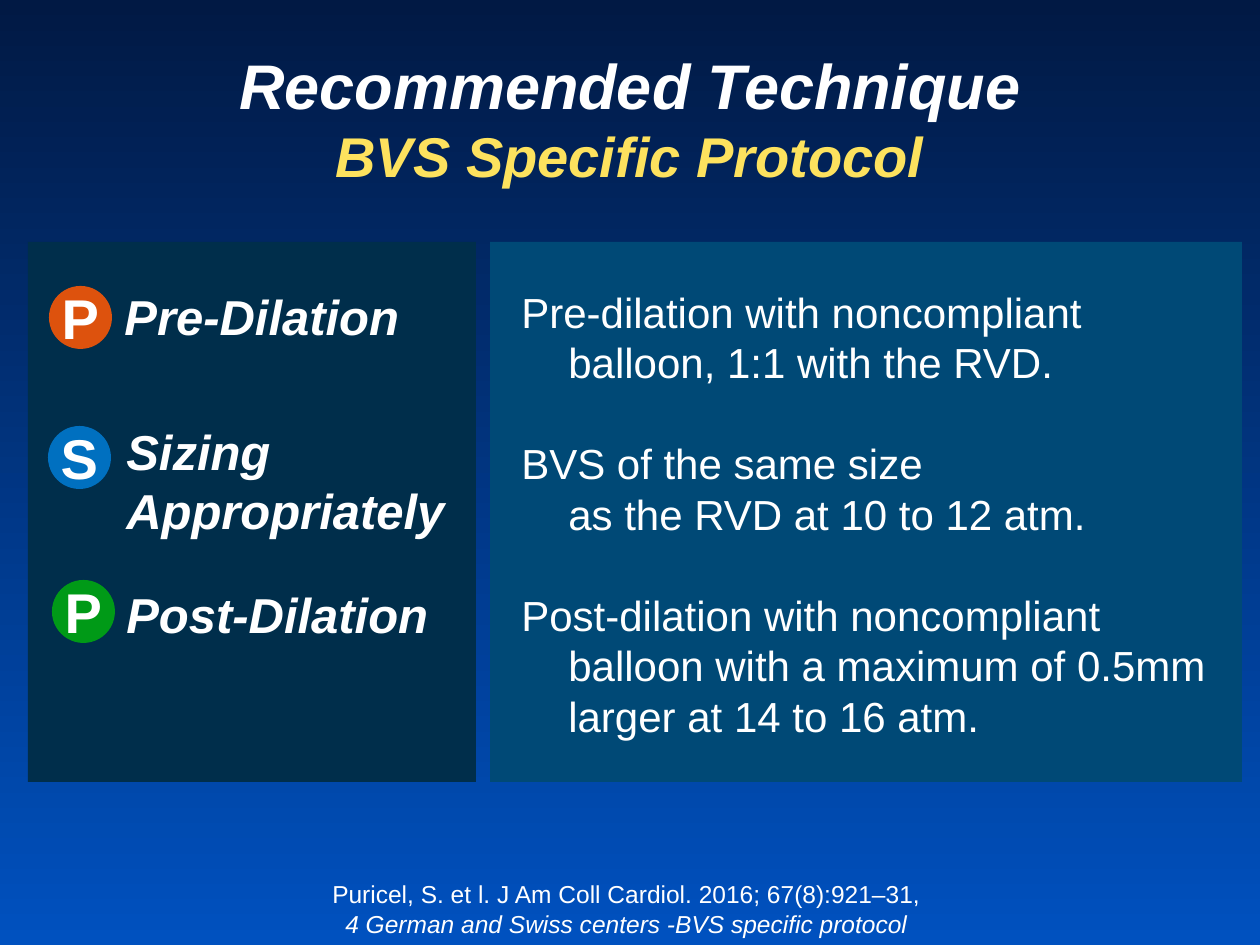
"""Build the recommended technique slide with its pre-dilation, sizing and post-dilation steps."""
from pptx import Presentation
from pptx.dml.color import RGBColor
from pptx.enum.shapes import MSO_SHAPE as Shape
from pptx.enum.text import MSO_ANCHOR as Anchor, MSO_AUTO_SIZE as AutoSize, PP_ALIGN as Align
from pptx.util import Pt

EMU_PER_INCH, PX_PER_INCH = 914400, 126
COLORS = {
    "top": "011944", "bottom": "0051BF", "details": "004976", "steps": "002E4B",
    "orange": "DD520D", "blue": "0070C0", "green": "009A17",
    "white": "FFFFFF", "yellow": "FDE25E",
}


def px(length):
    return round(length * EMU_PER_INCH / PX_PER_INCH)


def color(name):
    return RGBColor.from_string(COLORS[name])


def write(paragraph, text, size, fill="white", bold=False, italic=False,
          align=Align.LEFT, before=0, hanging=0):
    paragraph.alignment = align
    paragraph.space_before = Pt(before)
    if hanging:
        properties = paragraph._p.get_or_add_pPr()
        properties.set("marL", str(px(hanging)))
        properties.set("indent", str(-px(hanging)))
    run = paragraph.add_run()
    run.text = text
    font = run.font
    font.name, font.size, font.bold, font.italic = "Arial", Pt(size), bold, italic
    font.color.rgb = color(fill)


class SlideBuilder:
    def __init__(self, presentation):
        self.slide = presentation.slides.add_slide(presentation.slide_layouts[5])

    def background(self, top, bottom):
        fill = self.slide.background.fill
        fill.gradient()
        fill.gradient_angle = 270
        for stop, name, position in zip(fill.gradient_stops, (top, bottom), (0, 1)):
            stop.color.rgb = color(name)
            stop.position = position

    def fill_text(self, frame, lines, **style):
        frame.word_wrap = True
        frame.auto_size = AutoSize.NONE
        frame.vertical_anchor = Anchor.TOP
        for index, (text, changes) in enumerate(lines):
            paragraph = frame.add_paragraph() if index else frame.paragraphs[0]
            write(paragraph, text, **{**style, **changes})

    def title(self, box, lines, **style):
        title = self.slide.shapes.title
        title.left, title.top, title.width, title.height = map(px, box)
        self.fill_text(title.text_frame, lines, **style)

    def text(self, box, lines, **style):
        frame = self.slide.shapes.add_textbox(*map(px, box)).text_frame
        self.fill_text(frame, lines, **style)

    def shape(self, kind, box, fill):
        shape = self.slide.shapes.add_shape(kind, *map(px, box))
        shape.shadow.inherit = False
        shape.fill.solid()
        shape.fill.fore_color.rgb = color(fill)
        shape.line.fill.background()
        return shape

    def badge(self, left, top, letter, fill):
        frame = self.shape(Shape.OVAL, (left, top, 63, 63), fill).text_frame
        frame.word_wrap = False
        frame.vertical_anchor = Anchor.MIDDLE
        write(frame.paragraphs[0], letter, 32, bold=True, align=Align.CENTER)


def main():
    presentation = Presentation()
    presentation.slide_width, presentation.slide_height = px(1260), px(945)
    builder = SlideBuilder(presentation)
    builder.background("top", "bottom")
    builder.title((0, 40, 1260, 158), [
        ("Recommended Technique", {}),
        ("BVS Specific Protocol", {"size": 32, "fill": "yellow"}),
    ], size=36, bold=True, italic=True, align=Align.CENTER)

    builder.shape(Shape.RECTANGLE, (490, 242, 752, 540), "details")
    builder.text((509, 280, 732, 471), [
        ("Pre-dilation with noncompliant balloon, 1:1 with the RVD.", {}),
        ("BVS of the same size", {"before": 29}),
        ("\tas the RVD at 10 to 12 atm.", {}),
        ("Post-dilation with noncompliant balloon with a maximum of 0.5mm larger at 14 to 16 atm.",
         {"before": 29}),
    ], size=24, hanging=47)

    builder.shape(Shape.RECTANGLE, (28, 242, 448, 540), "steps")
    steps = [
        ("P", "orange", (49, 286), (112, 280, 374, 72), ["Pre-Dilation"]),
        ("S", "blue", (48, 426), (114, 415, 418, 131), ["Sizing", "Appropriately"]),
        ("P", "green", (52, 580), (114, 578, 418, 72), ["Post-Dilation"]),
    ]
    for letter, fill, corner, box, lines in steps:
        builder.badge(*corner, letter, fill)
        builder.text(box, [(line, {}) for line in lines], size=28, bold=True, italic=True)

    builder.text((0, 873, 1260, 72), [
        ("Puricel, S. et l. J Am Coll Cardiol. 2016; 67(8):921–31, ", {}),
        ("4 German and Swiss centers -BVS specific protocol ", {"italic": True}),
    ], size=14, align=Align.CENTER)
    presentation.save("out.pptx")


if __name__ == "__main__":
    main()
